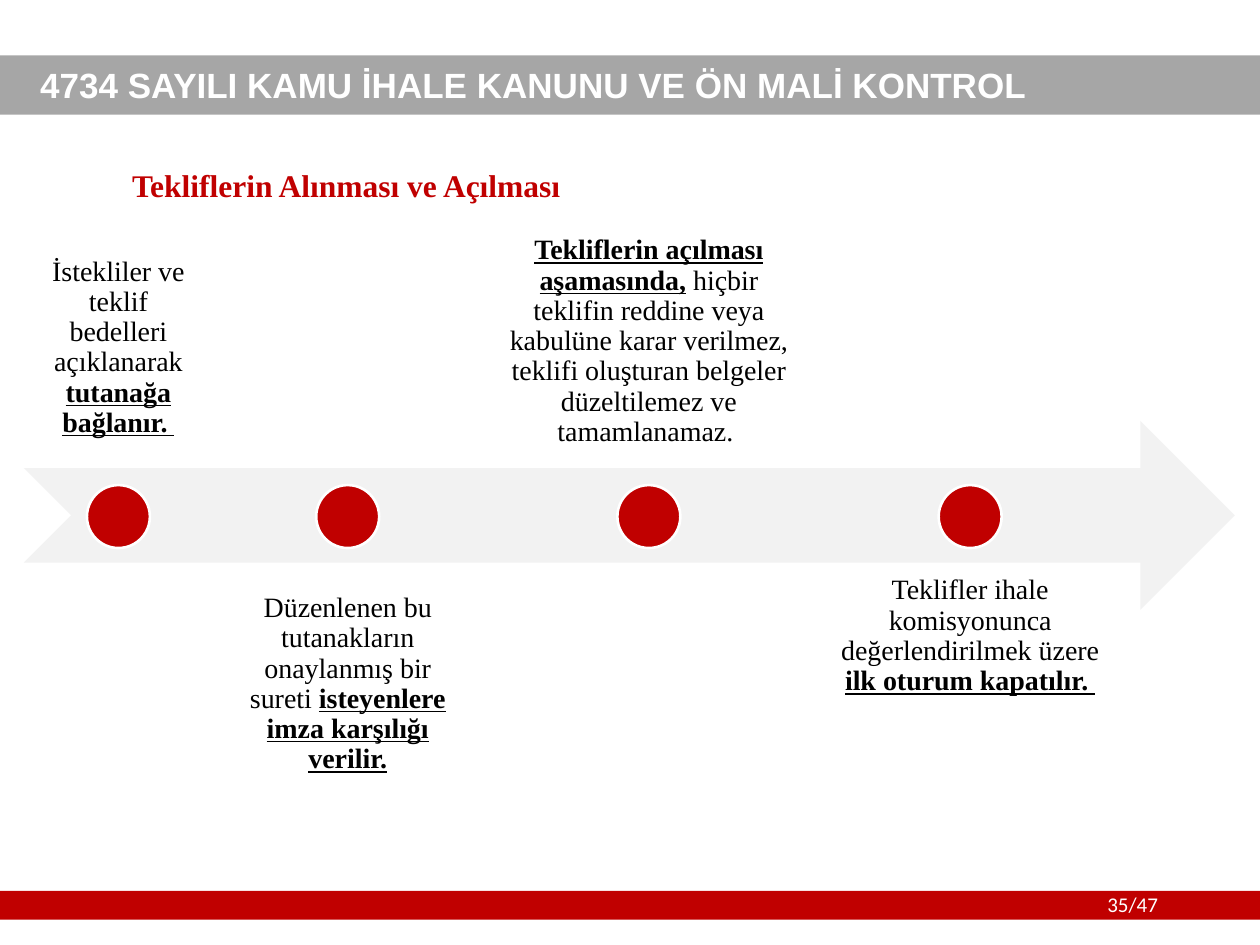
from pptx import Presentation
from pptx.dml.color import RGBColor
from pptx.enum.shapes import MSO_SHAPE
from pptx.enum.text import MSO_ANCHOR, PP_ALIGN
from pptx.util import Inches, Pt

RED, GRAY, PALE, WHITE, BLACK = "C00000", "A6A6A6", "F2F2F2", "FFFFFF", "000000"
SERIF = "Times New Roman"
DOT_SIZE, DOT_TOP = 0.5, 3.85
STEP_HEIGHT = 1.98

# Each step: centre x, top, width, anchor, runs of (text, emphasised)
STEPS = [
    (0.94, 1.62, 1.48, MSO_ANCHOR.BOTTOM, [
        ("İstekliler ve teklif bedelleri açıklanarak ", False),
        ("tutanağa bağlanır. ", True)]),
    (2.76, 4.59, 2.02, MSO_ANCHOR.TOP, [
        ("Düzenlenen bu tutanakların onaylanmış bir sureti ", False),
        ("isteyenlere imza karşılığı verilir.", True)]),
    (5.15, 1.69, 2.65, MSO_ANCHOR.BOTTOM, [
        ("Tekliflerin açılması aşamasında,", True),
        (" hiçbir teklifin reddine veya kabulüne karar verilmez, teklifi "
         "oluşturan belgeler düzeltilemez ve tamamlanamaz. ", False)]),
    (7.7, 4.45, 2.29, MSO_ANCHOR.TOP, [
        ("Teklifler ihale komisyonunca değerlendirilmek üzere ", False),
        ("ilk oturum kapatılır. ", True)]),
]


def color(value):
    return RGBColor.from_string(value)


def add_shape(page, kind, left, top, width, height, fill, line=None):
    shape = page.shapes.add_shape(
        kind, Inches(left), Inches(top), Inches(width), Inches(height))
    shape.shadow.inherit = False
    shape.fill.solid()
    shape.fill.fore_color.rgb = color(fill)
    if line:
        shape.line.color.rgb = color(line)
        shape.line.width = Pt(1.5)
    else:
        shape.line.fill.background()
    return shape


def add_box(page, left, top, width, height, anchor=MSO_ANCHOR.TOP):
    box = page.shapes.add_textbox(
        Inches(left), Inches(top), Inches(width), Inches(height))
    box.text_frame.word_wrap = True
    box.text_frame.vertical_anchor = anchor
    return box


def style(font, name, size, fill, bold=False, underline=False):
    font.name = name
    font.size = Pt(size)
    font.color.rgb = color(fill)
    font.bold = bold
    font.underline = underline


def add_label(page, text, place, name, size, fill, bold=False,
              anchor=MSO_ANCHOR.TOP, spacing=0.9):
    box = add_box(page, *place, anchor)
    box.text_frame.text = text
    para = box.text_frame.paragraphs[0]
    para.line_spacing = spacing
    style(para.runs[0].font, name, size, fill, bold)


def add_step(page, center, top, width, anchor, runs):
    box = add_box(page, center - width / 2, top, width, STEP_HEIGHT, anchor)
    frame = box.text_frame
    frame.margin_left = frame.margin_right = Inches(0.12)
    frame.margin_top = frame.margin_bottom = Inches(0.12)
    para = frame.paragraphs[0]
    para.alignment = PP_ALIGN.CENTER
    para.line_spacing = 0.9
    para.space_after = Pt(5.6)
    for text, emphasised in runs:
        span = para.add_run()
        span.text = text
        style(span.font, SERIF, 16, BLACK, emphasised, emphasised)
    add_shape(page, MSO_SHAPE.OVAL, center - DOT_SIZE / 2, DOT_TOP,
              DOT_SIZE, DOT_SIZE, RED, WHITE)


def main():
    deck = Presentation()
    deck.slide_width, deck.slide_height = Inches(10), Inches(7.5)
    page = deck.slides.add_slide(deck.slide_layouts[6])

    # Header and footer bands
    add_shape(page, MSO_SHAPE.RECTANGLE, 0, 7.07, 10, 0.23, RED)
    add_shape(page, MSO_SHAPE.RECTANGLE, 0, 0.44, 10, 0.47, GRAY)
    add_label(page, "4734 SAYILI KAMU İHALE KANUNU VE ÖN MALİ KONTROL",
              (0.22, 0.46, 9.05, 0.47), "Arial", 20, WHITE, True,
              MSO_ANCHOR.MIDDLE)
    add_label(page, "35/47", (8.69, 7.03, 0.93, 0.3), "Calibri", 12, WHITE,
              spacing=1.0)

    # Title
    add_label(page, "Tekliflerin Alınması ve Açılması",
              (0.95, 1.3, 9.05, 0.47), SERIF, 18, RED, True)

    # Timeline arrow and its steps
    add_shape(page, MSO_SHAPE.NOTCHED_RIGHT_ARROW, 0.19, 3.34, 9.61, 1.5, PALE)
    for step in STEPS:
        add_step(page, *step)

    deck.save("out.pptx")


if __name__ == "__main__":
    main()
